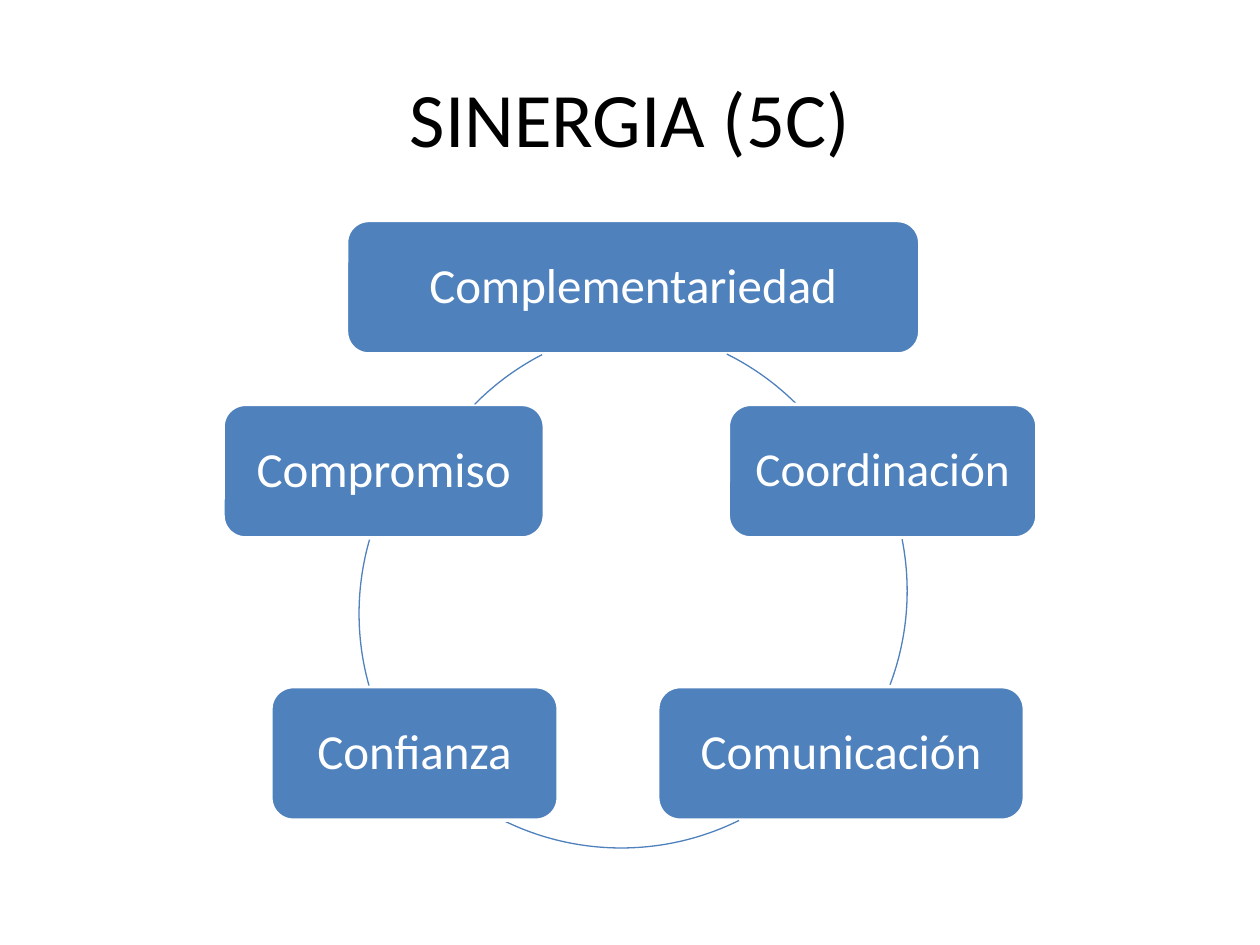
from pptx import Presentation
from pptx.dml.color import RGBColor as RGB
from pptx.enum.shapes import MSO_SHAPE as Shape
from pptx.enum.text import MSO_ANCHOR as Anchor, PP_ALIGN as Align
from pptx.util import Inches, Pt

COLORS = {"blue": "4F81BD", "white": "FFFFFF", "black": "000000"}
ROUND = 0.167
NODE_H = 1.06
RING = 4.22

# text, left, top, width, font size, inset
NODES = [
    ("Complementariedad", 0.98, 0, 4.55, 28, 0.12),
    ("Coordinación", 4.01, 1.46, 2.45, 27, 0.11),
    ("Comunicación", 3.45, 3.7, 2.91, 28, 0.12),
    ("Confianza", 0.38, 3.7, 2.28, 28, 0.12),
    ("Compromiso", 0, 1.46, 2.55, 28, 0.12),
]
# left, top, start and end in degrees
ARCS = [
    (0.95, 0.84, 296.4, 315),
    (1.21, 0.83, 348.8, 20.7),
    (1.05, 0.76, 63.7, 115.8),
    (1.08, 1.01, 164.3, 196.3),
    (1.39, 0.83, 224.6, 242.7),
]


def color(name):
    return RGB.from_string(COLORS[name])


def write(shape, text, size=28, ink="white", inset=0.1, space=1.0):
    frame = shape.text_frame
    frame.word_wrap = True
    frame.vertical_anchor = Anchor.MIDDLE
    frame.margin_left = frame.margin_right = Inches(inset)
    frame.margin_top = frame.margin_bottom = Inches(inset)
    para = frame.paragraphs[0]
    para.alignment = Align.CENTER
    para.line_spacing = space
    run = para.add_run()
    run.text = text
    run.font.size = Pt(size)
    run.font.name = "Calibri"
    run.font.color.rgb = color(ink)


def place(shapes, kind, box, line, weight):
    shape = shapes.add_shape(kind, *map(Inches, box))
    shape.shadow.inherit = False
    shape.line.color.rgb = color(line)
    shape.line.width = Pt(weight)
    return shape


def head(slide, left, top, width, height):
    title = slide.shapes.title
    title.left, title.top = Inches(left), Inches(top)
    title.width, title.height = Inches(width), Inches(height)
    write(title, "SINERGIA (5C)", size=44, ink="black", inset=0.05)


def cycle(slide, left, top):
    shapes = slide.shapes.add_group_shape().shapes
    for node, (x, y, start, end) in zip(NODES, ARCS):
        text, dx, dy, width, size, inset = node
        box = (left + dx, top + dy, width, NODE_H)
        card = place(shapes, Shape.ROUNDED_RECTANGLE, box, "white", 2)
        card.adjustments[0] = ROUND
        card.fill.solid()
        card.fill.fore_color.rgb = color("blue")
        write(card, text, size=size, inset=inset, space=0.9)

        ring = (left + x, top + y, RING, RING)
        arc = place(shapes, Shape.ARC, ring, "blue", 0.75)
        arc.fill.background()
        arc.adjustments[0] = start * 0.6
        arc.adjustments[1] = end * 0.6


def main():
    deck = Presentation()
    deck.slide_width, deck.slide_height = Inches(10), Inches(7.5)
    slide = deck.slides.add_slide(deck.slide_layouts[5])
    head(slide, 0.5, 0.3, 9, 1.25)
    cycle(slide, 1.77, 1.75)
    deck.save("out.pptx")


if __name__ == "__main__":
    main()
